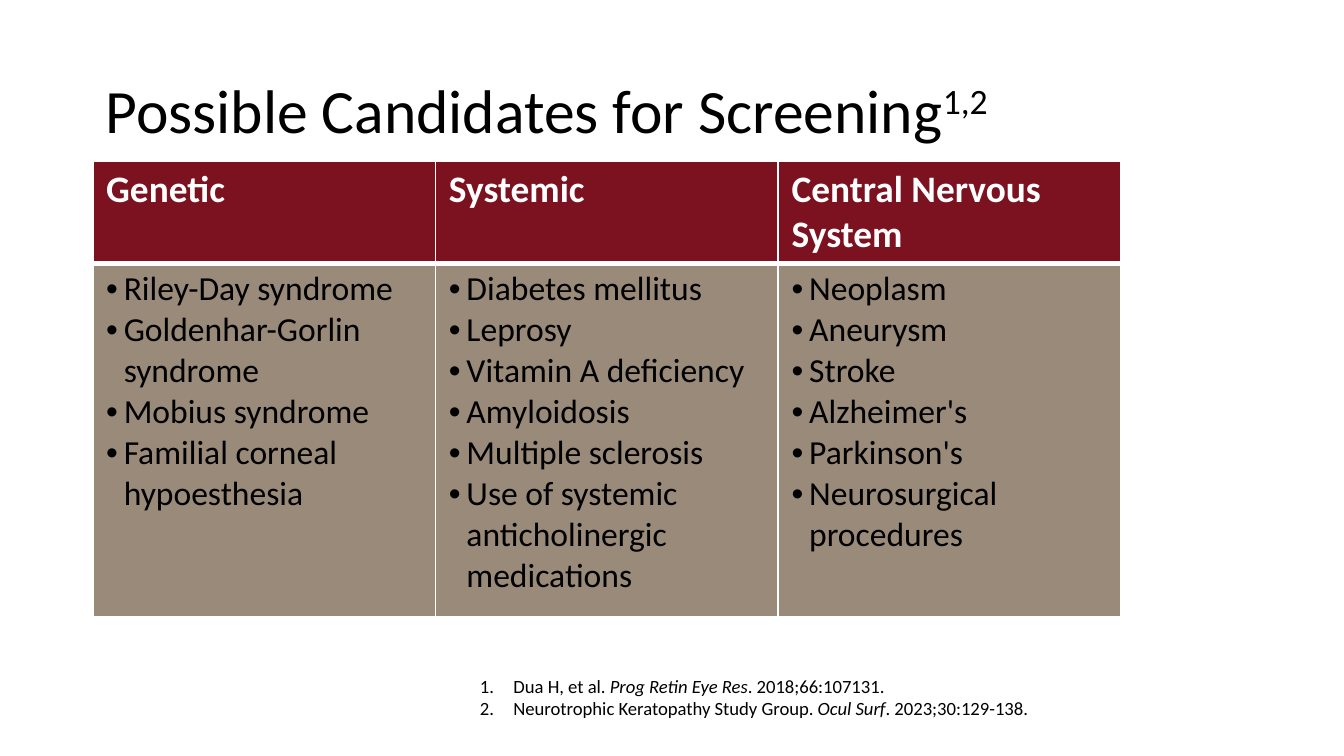
from dataclasses import dataclass

import pptx
import pptx.dml.color
import pptx.enum.text
import pptx.oxml.ns
import pptx.oxml.xmlchemy
import pptx.util

Pt = pptx.util.Pt
new_element = pptx.oxml.xmlchemy.OxmlElement
ANCHOR = pptx.enum.text.MSO_ANCHOR


@dataclass(frozen=True)
class Theme:
    font: str = "Calibri"
    ink: str = "000000"
    paper: str = "FFFFFF"
    header: str = "7C111F"
    body: str = "998A79"
    title_size: int = 33
    header_size: int = 20
    body_size: int = 18
    note_size: int = 10


THEME = Theme()

CANDIDATES = {
    "Genetic": [
        "Riley-Day syndrome", "Goldenhar-Gorlin syndrome",
        "Mobius syndrome", "Familial corneal hypoesthesia",
    ],
    "Systemic": [
        "Diabetes mellitus", "Leprosy", "Vitamin A deficiency", "Amyloidosis",
        "Multiple sclerosis", "Use of systemic anticholinergic medications",
    ],
    "Central Nervous System": [
        "Neoplasm", "Aneurysm", "Stroke", "Alzheimer's", "Parkinson's",
        "Neurosurgical procedures",
    ],
}

REFERENCES = [
    ("Dua H, et al. ", "Prog Retin Eye Res", ". 2018;66:107131."),
    ("Neurotrophic Keratopathy Study Group. ", "Ocul Surf", ". 2023;30:129-138."),
]


def rgb(color):
    return pptx.dml.color.RGBColor.from_string(color)


def add_text(para, text, *, size, color=THEME.ink, bold=False, italic=False, raised=False):
    span = para.add_run()
    span.text = text
    span.font.name = THEME.font
    span.font.size = Pt(size)
    span.font.color.rgb = rgb(color)
    span.font.bold = bold
    span.font.italic = italic
    if raised:
        span._r.get_or_add_rPr().set("baseline", "30000")


def add_marker(para, tag, indent, **attributes):
    """Give a paragraph a hanging indent and a bullet or number."""
    properties = para._p.get_or_add_pPr()
    properties.set("marL", str(Pt(indent)))
    properties.set("indent", str(-Pt(indent)))
    font = new_element("a:buFont")
    font.set("typeface", "Arial" if tag == "a:buChar" else "+mj-lt")
    marker = new_element(tag)
    for name, value in attributes.items():
        marker.set(name, value)
    properties.extend([font, marker])


def paragraphs(frame, items):
    """Pair each item with its own paragraph, using the first one already there."""
    for index, item in enumerate(items):
        yield (frame.add_paragraph() if index else frame.paragraphs[0]), item


def add_frame(slide, box, anchor):
    frame = slide.shapes.add_textbox(*map(Pt, box)).text_frame
    frame.word_wrap = True
    frame.vertical_anchor = anchor
    return frame


def add_title(slide, box):
    para = add_frame(slide, box, ANCHOR.MIDDLE).paragraphs[0]
    para.line_spacing = 0.9
    add_text(para, "Possible Candidates for Screening", size=THEME.title_size)
    add_text(para, "1,2", size=THEME.title_size, raised=True)


def style_cell(cell, fill, bottom_width):
    cell.margin_top = cell.margin_bottom = Pt(2.7)
    properties = cell._tc.get_or_add_tcPr()
    for side in "LRTB":
        width = bottom_width if side == "B" else 1
        line = new_element(f"a:ln{side}")
        line.set("w", str(Pt(width)))
        solid = new_element("a:solidFill")
        color = new_element("a:srgbClr")
        color.set("val", THEME.paper)
        solid.append(color)
        line.append(solid)
        properties.append(line)
    cell.fill.solid()
    cell.fill.fore_color.rgb = rgb(fill)


def add_candidates(slide, box, header_height):
    left, top, width, height = box
    table = slide.shapes.add_table(2, len(CANDIDATES), *map(Pt, box)).table
    table.rows[0].height = Pt(header_height)
    table.rows[1].height = Pt(height - header_height)
    for index, (group, conditions) in enumerate(CANDIDATES.items()):
        table.columns[index].width = Pt(width / len(CANDIDATES))
        header, body = table.cell(0, index), table.cell(1, index)
        style_cell(header, THEME.header, 3)
        style_cell(body, THEME.body, 1)
        add_text(header.text_frame.paragraphs[0], group,
                 size=THEME.header_size, color=THEME.paper, bold=True)
        for para, condition in paragraphs(body.text_frame, conditions):
            add_marker(para, "a:buChar", 9.4, char="•")
            add_text(para, condition, size=THEME.body_size)


def add_references(slide, box):
    frame = add_frame(slide, box, ANCHOR.TOP)
    for para, (authors, journal, issue) in paragraphs(frame, REFERENCES):
        add_marker(para, "a:buAutoNum", 18, type="arabicPeriod")
        add_text(para, authors, size=THEME.note_size)
        add_text(para, journal, size=THEME.note_size, italic=True)
        add_text(para, issue, size=THEME.note_size)


def main():
    deck = pptx.Presentation()
    deck.slide_width, deck.slide_height = Pt(720), Pt(405)
    slide = deck.slides.add_slide(deck.slide_layouts[6])
    add_title(slide, (49.5, 21.6, 621, 78.3))
    add_references(slide, (250, 357.8, 464, 31.7))
    add_candidates(slide, (49.7, 86.6, 550.8, 243.9), header_height=54.5)
    deck.save("out.pptx")


if __name__ == "__main__":
    main()
